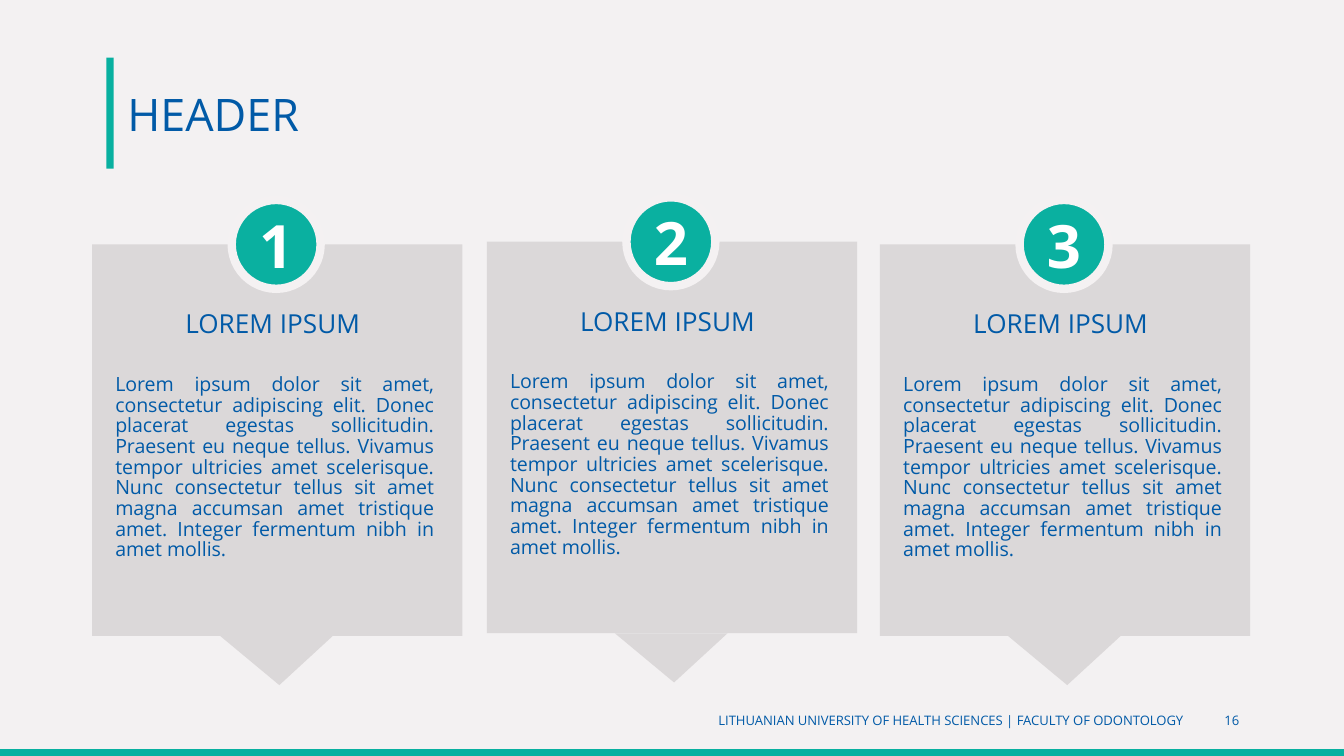
from pptx import Presentation
from pptx.dml.color import RGBColor
from pptx.enum.shapes import MSO_SHAPE as Shape
from pptx.enum.text import MSO_ANCHOR as Anchor, PP_ALIGN as Align
from pptx.util import Cm, Pt

COLORS = {
    "background": "F3F1F2",
    "teal": "08B0A0",
    "badge": "0AB0A0",
    "ring": "F4F1F2",
    "card": "DBD8D9",
    "blue": "015AA7",
    "white": "FFFFFF",
}
BODY = (
    "Lorem ipsum dolor sit amet, consectetur adipiscing elit. Donec placerat "
    "egestas sollicitudin. Praesent eu neque tellus. Vivamus tempor ultricies "
    "amet scelerisque. Nunc consectetur tellus sit amet magna accumsan amet "
    "tristique amet. Integer fermentum nibh in amet mollis."
)


def add_shape(kind, left, top, width, height, color):
    shape = page.shapes.add_shape(kind, Cm(left), Cm(top), Cm(width), Cm(height))
    shape.shadow.inherit = False
    shape.fill.solid()
    shape.fill.fore_color.rgb = RGBColor.from_string(COLORS[color])
    shape.line.fill.background()
    return shape


def write(box, text, size, align, anchor=Anchor.MIDDLE, color="blue", bold=False, spacing=None):
    frame = box.text_frame
    frame.word_wrap = True
    frame.vertical_anchor = anchor
    para = frame.paragraphs[0]
    para.alignment = align
    para.line_spacing = spacing
    span = para.add_run()
    span.text = text
    span.font.name = "Open Sans"
    span.font.size = Pt(size)
    span.font.bold = bold
    span.font.color.rgb = RGBColor.from_string(COLORS[color])


deck = Presentation()
deck.slide_width = Cm(25.4)
deck.slide_height = Cm(14.29)
page = deck.slides.add_slide(deck.slide_layouts[6])

add_shape(Shape.RECTANGLE, 0, 0, 25.4, 14.29, "background")
add_shape(Shape.RECTANGLE, 0, 14.16, 25.4, 0.13, "teal")
add_shape(Shape.RECTANGLE, 2.01, 1.09, 0.14, 2.1, "teal")

header = page.shapes.add_textbox(Cm(2.16), Cm(1.09), Cm(21.49), Cm(2.11))
write(header, "HEADER", 24, Align.LEFT)

for text, left, width in (
    ("LITHUANIAN UNIVERSITY OF HEALTH SCIENCES | FACULTY OF ODONTOLOGY", 4.27, 18.34),
    ("16", 22.76, 0.91),
):
    footer = page.shapes.add_textbox(Cm(left), Cm(13.23), Cm(width), Cm(0.76))
    write(footer, text, 7, Align.RIGHT)

for number, left, top in (("1", 1.74, 4.62), ("2", 9.2, 4.57), ("3", 16.63, 4.62)):
    add_shape(Shape.RECTANGLE, left, top, 7, 7.4, "card")

    badge = add_shape(Shape.OVAL, left + 2.64, top - 0.84, 1.68, 1.68, "badge")
    badge.line.color.rgb = RGBColor.from_string(COLORS["ring"])
    badge.line.width = Pt(4.5)
    frame = badge.text_frame
    frame.margin_left = frame.margin_right = frame.margin_top = frame.margin_bottom = 0
    write(badge, number, 32, Align.CENTER, color="white", bold=True)

    pointer = add_shape(Shape.ISOSCELES_TRIANGLE, left + 2.42, top + 7.4, 2.13, 0.93, "card")
    pointer.rotation = 180
    pointer.adjustments[0] = 0.475

    body = page.shapes.add_textbox(Cm(left + 0.19), Cm(top + 2.34), Cm(6.53), Cm(4.29))
    write(body, BODY, 10.5, Align.JUSTIFY, Anchor.TOP, spacing=0.88)

    title = page.shapes.add_textbox(Cm(left + 0.19), Cm(top + 1.14), Cm(6.58), Cm(0.86))
    write(title, "LOREM IPSUM ", 14, Align.CENTER, Anchor.TOP, spacing=0.9)

deck.save("out.pptx")
